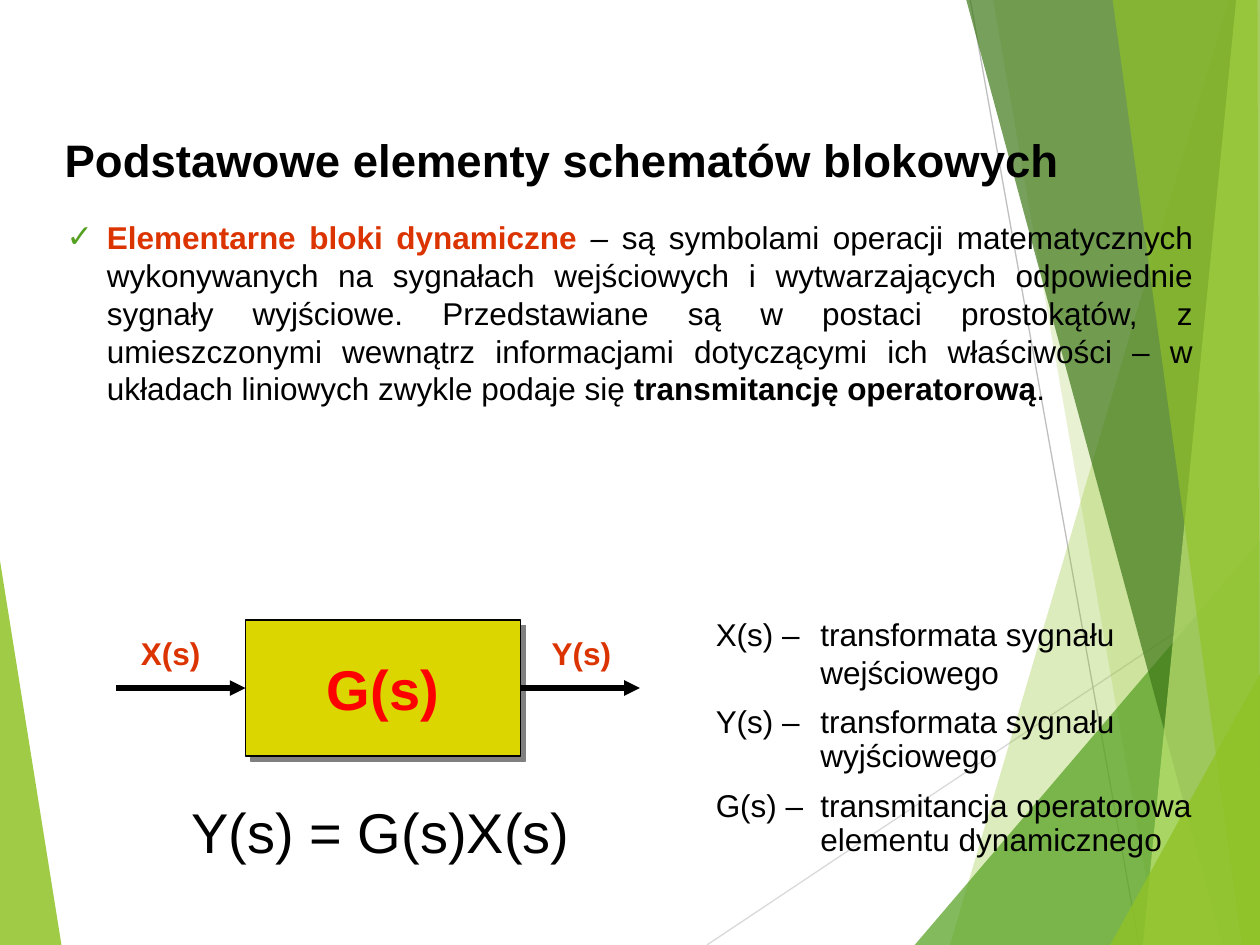
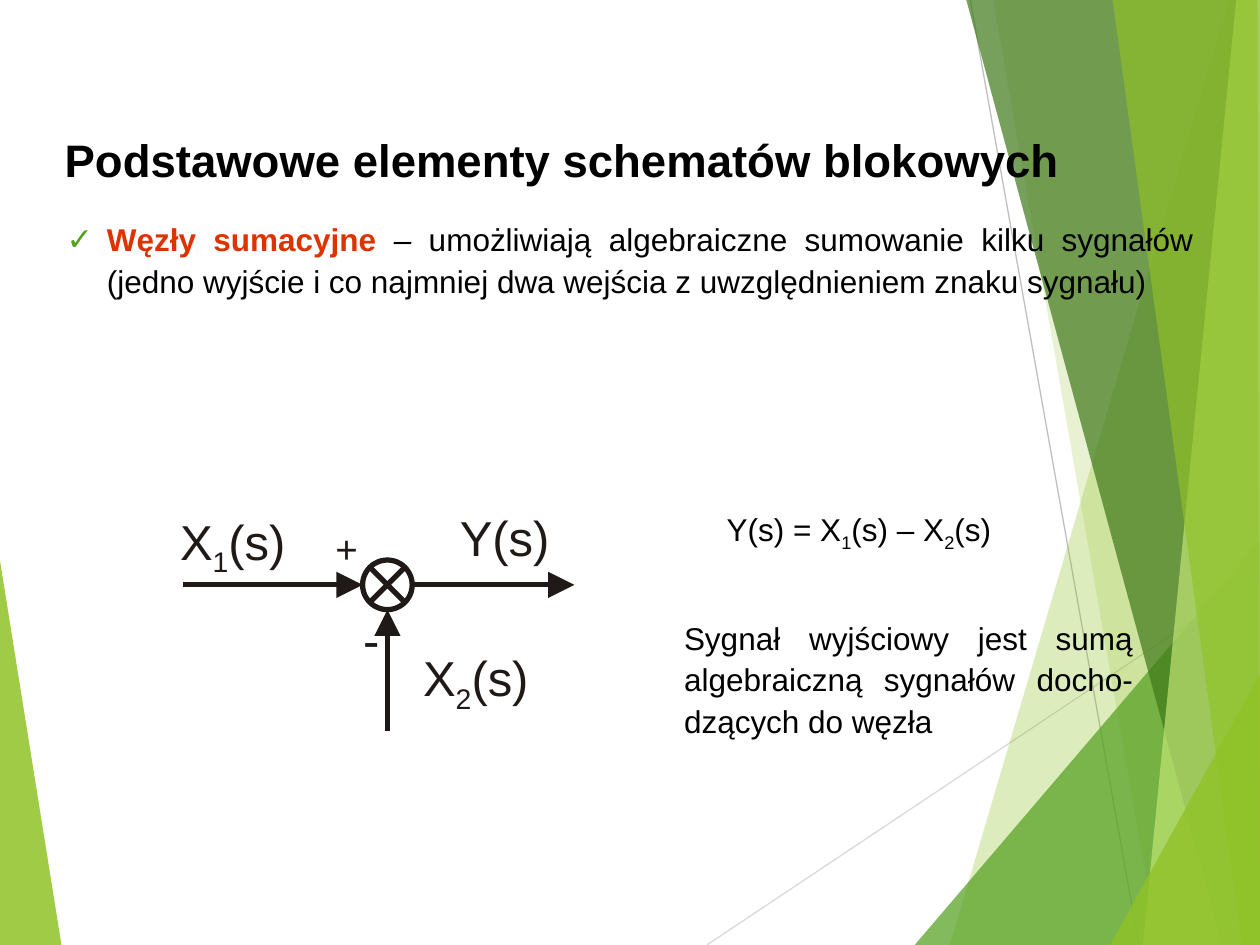
from lxml.etree import SubElement
from pptx import Presentation
from pptx.dml.color import RGBColor
from pptx.enum.shapes import MSO_CONNECTOR, MSO_SHAPE
from pptx.enum.text import MSO_ANCHOR, MSO_AUTO_SIZE, PP_ALIGN
from pptx.oxml.ns import qn
from pptx.util import Cm, Pt

BLACK = RGBColor(0x00, 0x00, 0x00)
INK = RGBColor(0x1F, 0x1A, 0x17)
ORANGE = RGBColor(0xDC, 0x34, 0x00)
RED = RGBColor(0xFF, 0x00, 0x00)
YELLOW = RGBColor(0xDB, 0xD6, 0x00)
LIME = RGBColor(0x90, 0xC2, 0x26)
GREEN = RGBColor(0x54, 0xA0, 0x21)
DARK_GREEN = RGBColor(0x3F, 0x78, 0x19)
PALE_LIME = RGBColor(0xC0, 0xE4, 0x74)
LIGHT_GREY = RGBColor(0xD9, 0xD9, 0xD9)
MID_GREY = RGBColor(0xBF, 0xBF, 0xBF)
SHADOW_GREY = RGBColor(0x80, 0x80, 0x80)
FONT = "Arial"
W, H = 25.4, 19.05


def add_run(paragraph, text, size, color=BLACK, style=""):
    """Style is any of: bold, italic, sub."""
    run = paragraph.add_run()
    run.text = text
    run.font.name = FONT
    run.font.size = Pt(size)
    run.font.color.rgb = color
    run.font.bold = style == "bold"
    run.font.italic = style == "italic"
    if style == "sub":
        run.font._element.set("baseline", "-25000")


def add_label(slide, left, top, width, height, size, texts, color=BLACK,
              style="", margin=None, wrap=True):
    """Add a text box; every second text is a subscript."""
    frame = slide.shapes.add_textbox(Cm(left), Cm(top), Cm(width), Cm(height)).text_frame
    frame.word_wrap = wrap
    if margin is not None:
        frame.margin_left = frame.margin_right = Cm(margin)
        frame.margin_top = frame.margin_bottom = Cm(margin)
    for i, text in enumerate(texts):
        add_run(frame.paragraphs[0], text, size, color, "sub" if i % 2 else style)
    return frame


prs = Presentation()
prs.slide_width, prs.slide_height = Cm(W), Cm(H)
layout = prs.slide_layouts[1]
block_slide = prs.slides.add_slide(layout)
sum_slide = prs.slides.add_slide(layout)

# Shared background: two thin lines and translucent green bands, kept on the layout
background = []
for x1, y1, x2, y2, color in [(14.25, H, W, 11.61, LIGHT_GREY),
                              (19.56, 0, 22.96, H, MID_GREY)]:
    thin_line = block_slide.shapes.add_connector(
        MSO_CONNECTOR.STRAIGHT, Cm(x1), Cm(y1), Cm(x2), Cm(y2))
    thin_line.line.color.rgb = color
    thin_line.line.width = Pt(0.75)
    SubElement(thin_line.element.spPr, qn("a:effectLst"))
    background.append(thin_line)

BANDS = [
    (LIME, 85, [(0, 11.3), (1.24, H), (0, H)]),
    (LIME, 30, [(24.77, 0), (19.15, H), (W, H), (W, 0)]),
    (LIME, 20, [(20.02, 0), (23.34, H), (W, H), (W, 0)]),
    (GREEN, 72, [(18.44, H), (W, 10.9), (W, H)]),
    (DARK_GREEN, 70, [(19.48, 0), (24.64, H), (W, H), (W, 0)]),
    (PALE_LIME, 70, [(24.92, 0), (23.04, H), (W, H), (W, 0)]),
    (LIME, 65, [(22.43, 0), (25.04, H), (W, H), (25.35, 0)]),
    (LIME, 80, [(22.38, H), (W, 13.59), (W, H)]),
]
for color, opacity, corners in BANDS:
    points = [(Cm(x), Cm(y)) for x, y in corners]
    outline = block_slide.shapes.build_freeform(*points[0])
    outline.add_line_segments(points[1:], close=True)
    band = outline.convert_to_shape()
    band.shadow.inherit = False
    band.fill.solid()
    band.fill.fore_color.rgb = color
    band.line.fill.background()
    tint = band.element.xpath(".//a:solidFill/a:srgbClr")[0]
    SubElement(tint, qn("a:alpha")).set("val", str(opacity * 1000))
    background.append(band)

for number, part in enumerate(background, start=100):
    part.element.xpath(".//p:cNvPr")[0].set("id", str(number))
    layout.shapes.element.append(part.element)

# Titles and definitions
DEFINITIONS = [
    (block_slide, 4.27, 7.37, 1.0, [
        ("Elementarne bloki dynamiczne", ORANGE, "bold"),
        (" – ", BLACK, "italic"),
        ("są symbolami operacji matematycznych wykonywanych na sygnałach "
         "wejściowych i wytwarzających odpowiednie sygnały wyjściowe. "
         "Przedstawiane są w postaci prostokątów, z umieszczonymi wewnątrz "
         "informacjami dotyczącymi ich właściwości – w układach liniowych "
         "zwykle podaje się ", BLACK, ""),
        ("transmitancję operatorową", BLACK, "bold"),
        (".", BLACK, "")]),
    (sum_slide, 4.24, 3.61, 1.1, [
        ("Węzły sumacyjne ", ORANGE, "bold"),
        ("– ", BLACK, "italic"),
        ("umożliwiają algebraiczne sumowanie kilku sygnałów (jedno wyjście "
         "i co najmniej dwa wejścia z uwzględnieniem znaku sygnału)", BLACK, "")]),
]
for slide, top, height, spacing, runs in DEFINITIONS:
    title, body = slide.shapes.title, slide.placeholders[1]
    title.left, title.top, title.width, title.height = Cm(1.05), Cm(2.54), Cm(22.86), Cm(1.35)
    body.left, body.top, body.width, body.height = Cm(1.09), Cm(top), Cm(23.22), Cm(height)
    for holder in (title, body):
        holder.text_frame.auto_size = MSO_AUTO_SIZE.NONE
        holder.text_frame.vertical_anchor = MSO_ANCHOR.TOP

    heading = title.text_frame.paragraphs[0]
    heading.alignment = PP_ALIGN.LEFT
    add_run(heading, "Podstawowe elementy schematów blokowych", 26, style="bold")

    definition = body.text_frame.paragraphs[0]
    definition.alignment = PP_ALIGN.JUSTIFY
    definition.line_spacing = spacing
    definition.space_before = Pt(0)
    for text, color, style in runs:
        add_run(definition, text, 18, color, style)
    props = definition._p.get_or_add_pPr()
    props.set("marL", str(Cm(0.81)))
    props.set("indent", str(-Cm(0.81)))
    SubElement(SubElement(props, qn("a:buClr")), qn("a:srgbClr")).set("val", str(GREEN))
    SubElement(props, qn("a:buFont")).set("typeface", FONT)
    SubElement(props, qn("a:buChar")).set("char", "✓")

# Slide 1: transfer block with its shadow
block = block_slide.shapes.add_shape(
    MSO_SHAPE.RECTANGLE, Cm(4.95), Cm(12.5), Cm(5.54), Cm(2.74))
block.fill.solid()
block.fill.fore_color.rgb = YELLOW
block.line.color.rgb = BLACK
block.line.width = Pt(0.75)
block.shadow.inherit = False
effects = block.element.spPr.find(qn("a:effectLst"))
drop = SubElement(effects, qn("a:outerShdw"), dist=str(Pt(4.2)), dir="2700000",
                  algn="ctr", rotWithShape="0")
SubElement(drop, qn("a:srgbClr")).set("val", str(SHADOW_GREY))
block.text_frame.vertical_anchor = MSO_ANCHOR.MIDDLE
block_name = block.text_frame.paragraphs[0]
block_name.alignment = PP_ALIGN.CENTER
block_name.space_before = Pt(2)
add_run(block_name, "G(s)", 32, RED, "bold")

# Slide 2: summing node
NODE_X, NODE_Y, NODE_R = 7.81, 11.79, 0.5
node = sum_slide.shapes.add_shape(
    MSO_SHAPE.FLOWCHART_SUMMING_JUNCTION, Cm(NODE_X - NODE_R), Cm(NODE_Y - NODE_R),
    Cm(2 * NODE_R), Cm(2 * NODE_R))
node.shadow.inherit = False
node.fill.background()
node.line.color.rgb = INK
node.line.width = Pt(3)

# Signal arrows of both diagrams
SIGNALS = [
    (block_slide, 2.34, 13.87, 4.95, 13.87, BLACK, "med"),
    (block_slide, 10.49, 13.87, 12.9, 13.87, BLACK, "med"),
    (sum_slide, 3.68, NODE_Y, NODE_X - NODE_R, NODE_Y, INK, "lg"),
    (sum_slide, NODE_X + NODE_R, NODE_Y, 11.58, NODE_Y, INK, "lg"),
    (sum_slide, NODE_X, 14.73, NODE_X, NODE_Y + NODE_R, INK, "lg"),
]
arrows = []
for slide, x1, y1, x2, y2, color, head in SIGNALS:
    arrow = slide.shapes.add_connector(
        MSO_CONNECTOR.STRAIGHT, Cm(x1), Cm(y1), Cm(x2), Cm(y2))
    arrow.line.color.rgb = color
    arrow.line.width = Pt(3)
    SubElement(arrow.element.xpath(".//a:ln")[0], qn("a:tailEnd"),
               type="triangle", w=head, len=head)
    SubElement(arrow.element.spPr, qn("a:effectLst"))
    arrows.append(arrow)
arrows[0].end_connect(block, 1)
arrows[1].begin_connect(block, 3)

# Slide 1: signal names, equation and legend
for left, name in [(2.54, "X(s)"), (10.82, "Y(s)")]:
    signal = add_label(block_slide, left, 12.66, 1.8, 1.02, 18, [name], ORANGE, "bold", margin=0)
    signal.vertical_anchor = MSO_ANCHOR.MIDDLE
    signal.paragraphs[0].alignment = PP_ALIGN.CENTER

add_label(block_slide, 3.61, 15.95, 8.26, 1.6, 32, ["Y(s) = G(s)X(s)"])

LEGEND = [("X(s) –", "transformata sygnału", "wejściowego"),
          ("Y(s) –", "transformata sygnału", "wyjściowego"),
          ("G(s) –", "transmitancja operatorowa", "elementu dynamicznego")]
legend = add_label(block_slide, 14.18, 12.27, 10.16, 5.31, 18, [])
for i, (symbol, first_line, second_line) in enumerate(LEGEND):
    entry = legend.add_paragraph() if i else legend.paragraphs[0]
    if i:
        entry.line_spacing = 0.9
        entry.space_before = Pt(9)
    entry._p.get_or_add_pPr().set("marL", str(Cm(2.11)))
    entry._p.get_or_add_pPr().set("indent", str(-Cm(2.11)))
    add_run(entry, f"{symbol}\t{first_line}", 18)
    entry.add_line_break()
    add_run(entry, second_line, 18)

# Slide 2: signal names and signs, equation and remark
for left, top, width, size, texts in [
        (3.63, 10.31, 2.5, 28, ["X", "1", "(s)"]),
        (9.27, 10.23, 2.5, 28, ["Y(s)"]),
        (8.53, 13.06, 2.5, 28, ["X", "2", "(s)"]),
        (6.76, 10.59, 0.6, 22, ["+"]),
        (7.32, 12.29, 0.5, 28, ["-"])]:
    add_label(sum_slide, left, top, width, 1.19, size, texts, INK, margin=0, wrap=False)

add_label(sum_slide, 14.4, 10.16, 7.77, 1.27, 18, ["Y(s) = X", "1", "(s) – X", "2", "(s)"])

remark = add_label(sum_slide, 13.54, 12.27, 9.55, 2.77, 18,
                   ["Sygnał wyjściowy jest sumą algebraiczną sygnałów docho-dzących do węzła"])
remark.paragraphs[0].alignment = PP_ALIGN.JUSTIFY
remark.paragraphs[0].line_spacing = 1.1

prs.save("out.pptx")
